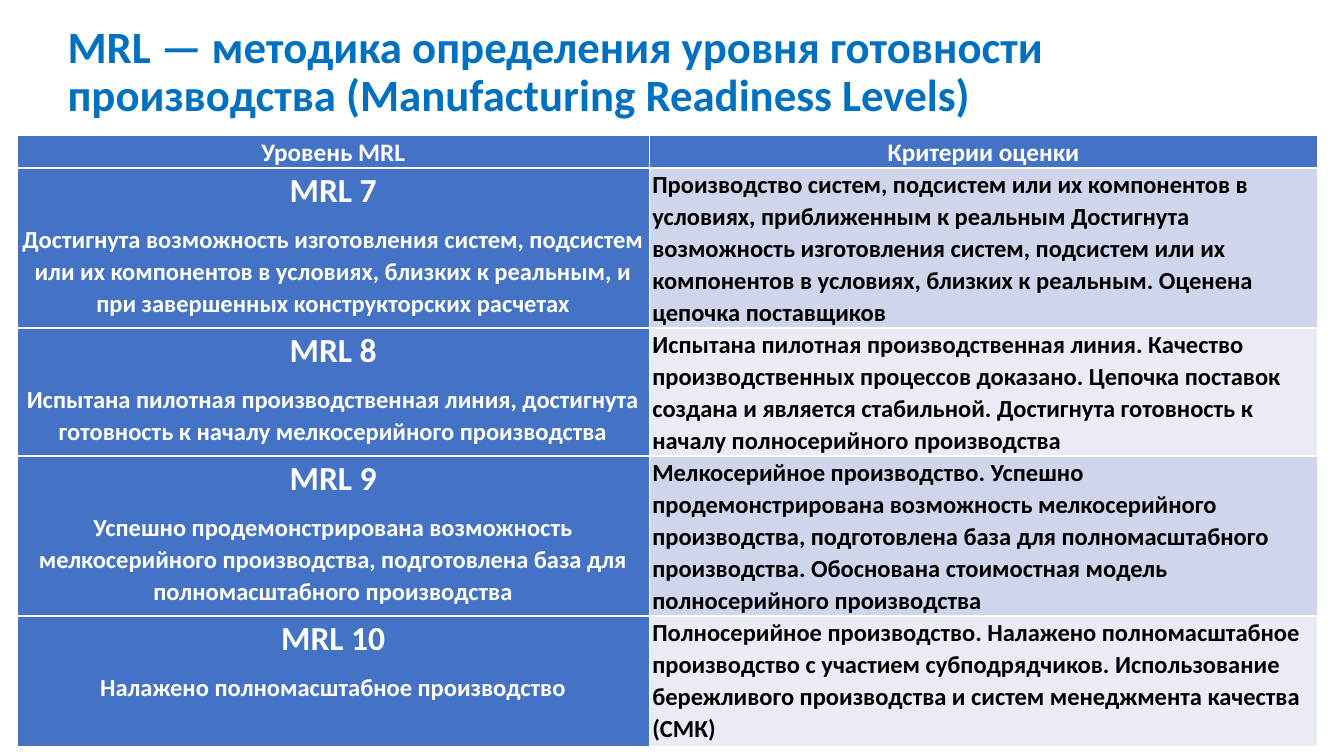
"""Build the slide with the table of manufacturing readiness levels."""
from dataclasses import dataclass

from pptx import Presentation
from pptx.dml.color import RGBColor as Rgb
from pptx.enum.text import MSO_ANCHOR as Anchor, MSO_AUTO_SIZE as Fit, PP_ALIGN as Align
from pptx.util import Inches, Pt


@dataclass(frozen=True)
class Theme:
    font: str = "Calibri"
    title: str = "0070C0"
    head: str = "4472C4"
    light: str = "FFFFFF"
    dark: str = "000000"
    bands: tuple = ("CFD5EA", "E9EBF5")
    big: float = 32
    name: float = 24
    label: float = 18
    body: float = 17.5


@dataclass(frozen=True)
class Level:
    name: str
    goal: str
    test: str
    high: float


LOOK = Theme()
HEADS = ("Уровень MRL", "Критерии оценки")
WIDTHS = (6.27, 6.63)
TOP = 0.3
LEVELS = (
    Level("MRL 7",
          "Достигнута возможность изготовления систем, подсистем или их компонентов "
          "в условиях, близких к реальным, и при завершенных конструкторских расчетах",
          "Производство систем, подсистем или их компонентов в условиях, приближенным "
          "к реальным Достигнута возможность изготовления систем, подсистем или их "
          "компонентов в условиях, близких к реальным. Оценена цепочка поставщиков", 1.55),
    Level("MRL 8",
          "Испытана пилотная производственная линия, достигнута готовность к началу "
          "мелкосерийного производства",
          "Испытана пилотная производственная линия. Качество производственных процессов "
          "доказано. Цепочка поставок создана и является стабильной. Достигнута "
          "готовность к началу полносерийного производства", 1.25),
    Level("MRL 9",
          "Успешно продемонстрирована возможность мелкосерийного производства, "
          "подготовлена база для полномасштабного производства",
          "Мелкосерийное производство. Успешно продемонстрирована возможность "
          "мелкосерийного производства, подготовлена база для полномасштабного "
          "производства. Обоснована стоимостная модель полносерийного производства", 1.55),
    Level("MRL 10",
          "Налажено полномасштабное производство",
          "Полносерийное производство. Налажено полномасштабное производство с участием "
          "субподрядчиков. Использование бережливого производства и систем менеджмента "
          "качества (СМК)", 1.3),
)


def write(para, text: str, *, size: float, color: str, align=Align.LEFT,
          line: float = 1.07, after: float = 8) -> None:
    para.alignment, para.line_spacing, para.space_after = align, line, Pt(after)
    run = para.add_run()
    run.text = text
    font = run.font
    font.name, font.size, font.bold = LOOK.font, Pt(size), True
    font.color.rgb = Rgb.from_string(color)


def paint(cell, fill: str, *lines: tuple[str, float], color: str = LOOK.light,
          align=Align.CENTER) -> None:
    cell.fill.solid()
    cell.fill.fore_color.rgb = Rgb.from_string(fill)
    cell.margin_left = cell.margin_right = Inches(0.03)
    cell.margin_top = cell.margin_bottom = 0
    frame = cell.text_frame
    for i, (text, size) in enumerate(lines):
        para = frame.add_paragraph() if i else frame.paragraphs[0]
        write(para, text, size=size, color=color, align=align)


def add_title(slide) -> None:
    title = slide.shapes.title
    title.left, title.top = Inches(0.57), Inches(0)
    title.width, title.height = Inches(11.5), Inches(1.45)
    frame = title.text_frame
    frame.word_wrap, frame.auto_size = True, Fit.NONE
    frame.vertical_anchor = Anchor.MIDDLE
    write(frame.paragraphs[0],
          "MRL — методика определения уровня готовности производства "
          "(Manufacturing Readiness Levels)",
          size=LOOK.big, color=LOOK.title, line=0.9, after=0)


def add_grid(slide) -> None:
    highs = (TOP, *(level.high for level in LEVELS))
    grid = slide.shapes.add_table(len(highs), len(WIDTHS), Inches(0.17), Inches(1.34),
                                  Inches(sum(WIDTHS)), Inches(sum(highs))).table
    for col, wide in zip(grid.columns, WIDTHS):
        col.width = Inches(wide)
    for row, high in zip(grid.rows, highs):
        row.height = Inches(high)
    for i, head in enumerate(HEADS):
        paint(grid.cell(0, i), LOOK.head, (head, LOOK.label))
    for i, level in enumerate(LEVELS):
        paint(grid.cell(i + 1, 0), LOOK.head,
              (level.name, LOOK.name), (level.goal, LOOK.body))
        paint(grid.cell(i + 1, 1), LOOK.bands[i % 2], (level.test, LOOK.body),
              color=LOOK.dark, align=Align.LEFT)


def main() -> None:
    deck = Presentation()
    deck.slide_width, deck.slide_height = Inches(13.33), Inches(7.5)
    slide = deck.slides.add_slide(deck.slide_layouts[5])
    add_title(slide)
    add_grid(slide)
    deck.save("out.pptx")


if __name__ == "__main__":
    main()
